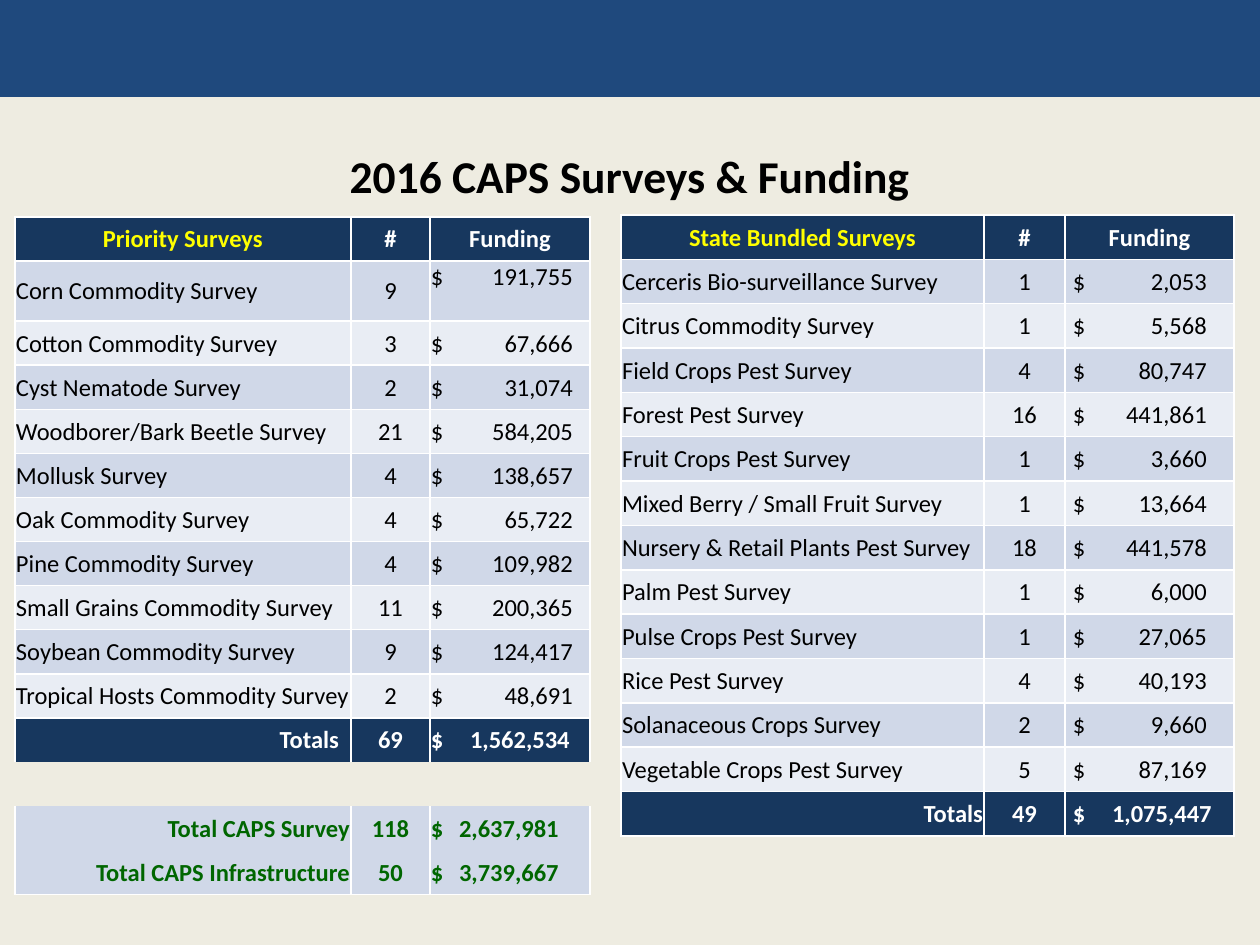
from dataclasses import dataclass

from lxml import etree
from pptx import Presentation
from pptx import util as u
from pptx.dml.color import RGBColor
from pptx.enum import shapes, text
from pptx.oxml import parse_xml
from pptx.oxml.ns import nsdecls, qn

PX = 914400 / 126
LEFT, CENTER, RIGHT = text.PP_ALIGN.LEFT, text.PP_ALIGN.CENTER, text.PP_ALIGN.RIGHT
PLAIN_GRID = "{2D5ABB26-0587-4C30-8999-92F81FD0307C}"
SIDES = {"l": "lnL", "r": "lnR", "t": "lnT", "b": "lnB"}


@dataclass(frozen=True)
class Theme:
    font: str = "Calibri"
    title_size: int = 26
    table_size: int = 14
    page: str = "EEECE1"
    band: str = "1F497D"
    dark: str = "17375E"
    odd: str = "D0D8E8"
    even: str = "E9EDF4"
    white: str = "FFFFFF"
    black: str = "000000"
    yellow: str = "FFFF00"
    green: str = "006600"


THEME = Theme()

PRIORITY = [
    ("Corn Commodity Survey", "9", "191,755"),
    ("Cotton Commodity Survey", "3", "67,666"),
    ("Cyst Nematode Survey", "2", "31,074"),
    ("Woodborer/Bark Beetle Survey", "21", "584,205"),
    ("Mollusk Survey", "4", "138,657"),
    ("Oak Commodity Survey", "4", "65,722"),
    ("Pine Commodity Survey", "4", "109,982"),
    ("Small Grains Commodity Survey", "11", "200,365"),
    ("Soybean Commodity Survey", "9", "124,417"),
    ("Tropical Hosts Commodity Survey", "2", "48,691"),
]
BUNDLED = [
    ("Cerceris Bio-surveillance Survey", "1", "2,053"),
    ("Citrus Commodity Survey", "1", "5,568"),
    ("Field Crops Pest Survey", "4", "80,747"),
    ("Forest Pest Survey", "16", "441,861"),
    ("Fruit Crops Pest Survey", "1", "3,660"),
    ("Mixed Berry / Small Fruit Survey", "1", "13,664"),
    ("Nursery & Retail Plants Pest Survey", "18", "441,578"),
    ("Palm Pest Survey", "1", "6,000"),
    ("Pulse Crops Pest Survey", "1", "27,065"),
    ("Rice Pest Survey", "4", "40,193"),
    ("Solanaceous Crops Survey", "2", "9,660"),
    ("Vegetable Crops Pest Survey", "5", "87,169"),
]


def px(length):
    return u.Emu(round(length * PX))


def write(frame, words, *, size=THEME.table_size, color=THEME.black, bold=False,
          align=LEFT, tab=None):
    """Put one formatted line in a text frame, with an optional right tab stop."""
    para = frame.paragraphs[0]
    para.alignment = align
    if tab:
        stops = etree.SubElement(para._p.get_or_add_pPr(), qn("a:tabLst"))
        etree.SubElement(stops, qn("a:tab"), pos=str(px(tab)), algn="r")
    span = para.add_run()
    span.text = words
    span.font.name = THEME.font
    span.font.size = u.Pt(size)
    span.font.bold = bold
    span.font.color.rgb = RGBColor.from_string(color)
    return span


def add_band(page):
    band = page.shapes.add_shape(shapes.MSO_SHAPE.RECTANGLE, 0, 0, px(1260), px(97))
    band.shadow.inherit = False
    band.fill.solid()
    band.fill.fore_color.rgb = RGBColor.from_string(THEME.band)
    band.line.fill.background()


def add_title(page, words):
    box = page.shapes.add_textbox(px(63), px(126), px(1134), px(98))
    frame = box.text_frame
    frame.word_wrap = True
    frame.vertical_anchor = text.MSO_ANCHOR.MIDDLE
    span = write(frame, words, size=THEME.title_size, bold=True, align=CENTER)
    shadow = parse_xml(
        f'<a:effectLst {nsdecls("a")}><a:outerShdw blurRad="38100" dist="38100" '
        'dir="2700000" algn="tl"><a:srgbClr val="000000"><a:alpha val="43000"/>'
        '</a:srgbClr></a:outerShdw></a:effectLst>')
    span._r.rPr.find(qn("a:latin")).addprevious(shadow)


def set_borders(cell, sides):
    """Draw white lines on the given sides and none on the others."""
    props = cell._tc.get_or_add_tcPr()
    for place, (side, tag) in enumerate(SIDES.items()):
        line = etree.Element(qn("a:" + tag), w=str(u.Pt(1)))
        if side in sides:
            paint = etree.SubElement(line, qn("a:solidFill"))
            etree.SubElement(paint, qn("a:srgbClr"), val=THEME.white)
        else:
            etree.SubElement(line, qn("a:noFill"))
        props.insert(place, line)


def style_cell(cell, fill, sides, left=1, right=1):
    cell.vertical_anchor = text.MSO_ANCHOR.MIDDLE
    cell.margin_left, cell.margin_right = px(left), px(right)
    cell.margin_top, cell.margin_bottom = px(1), 0
    if fill:
        cell.fill.solid()
        cell.fill.fore_color.rgb = RGBColor.from_string(fill)
    else:
        cell.fill.background()
    set_borders(cell, sides)


def add_grid(page, left, top, widths, count, row_height):
    frame = page.shapes.add_table(count, len(widths), px(left), px(top),
                                  px(sum(widths)), px(row_height * count))
    grid = frame.table
    grid.first_row = grid.horz_banding = False
    grid._tbl.tblPr.find(qn("a:tableStyleId")).text = PLAIN_GRID
    for column, width in zip(grid.columns, widths):
        column.width = px(width)
    for row in grid.rows:
        row.height = px(row_height)
    return grid


def fill_row(row, record, fill, *, sides="lrtb", color=THEME.black, bold=False,
             name_align=LEFT, name_right=1, money_left=1, tab=142):
    name, number, funding = row.cells
    style_cell(name, fill, sides, right=name_right)
    style_cell(number, fill, sides)
    style_cell(funding, fill, sides, left=money_left)
    look = dict(color=color, bold=bold)
    write(name.text_frame, record[0], align=name_align, **look)
    write(number.text_frame, record[1], align=CENTER, **look)
    write(funding.text_frame, "$\t" + record[2], tab=tab, **look)


def fill_surveys(grid, heading, surveys, totals, *, money_left, tab, total_tab,
                 total_sides, total_right):
    # Heading row
    for cell, words, color in zip(grid.rows[0].cells, (heading, "#", "Funding"),
                                  (THEME.yellow, THEME.white, THEME.white)):
        style_cell(cell, THEME.dark, "lrtb")
        write(cell.text_frame, words, color=color, bold=True, align=CENTER)
    # Banded survey rows
    for index, record in enumerate(surveys):
        fill_row(grid.rows[index + 1], record, (THEME.odd, THEME.even)[index % 2],
                 money_left=money_left, tab=tab)
    # Totals row
    fill_row(grid.rows[len(surveys) + 1], totals, THEME.dark, sides=total_sides,
             color=THEME.white, bold=True, name_align=RIGHT, name_right=total_right,
             money_left=money_left, tab=total_tab)


def add_priority_table(page):
    grid = add_grid(page, 15, 217, (336, 79, 160), 15, 618 / 14)
    fill_surveys(grid, "Priority Surveys", PRIORITY, ("Totals", "69", "1,562,534"),
                 money_left=1, tab=142, total_tab=139, total_sides="lrt", total_right=12)
    # The first survey is taller, with its funding at the top
    grid.rows[1].height = px(60)
    grid.cell(1, 2).vertical_anchor = text.MSO_ANCHOR.TOP
    # Open gap, then the programme totals
    for cell in grid.rows[12].cells:
        style_cell(cell, None, "")
    programme = [("Total CAPS Survey", "118", "2,637,981", "lr"),
                 ("Total CAPS Infrastructure", "50", "3,739,667", "lrb")]
    for index, (*record, sides) in enumerate(programme, 13):
        fill_row(grid.rows[index], record, THEME.odd, sides=sides, color=THEME.green,
                 bold=True, name_align=RIGHT, tab=128)


def add_bundled_table(page):
    grid = add_grid(page, 621, 215, (363, 81, 169), 14, 621 / 14)
    fill_surveys(grid, "State Bundled Surveys", BUNDLED, ("Totals", "49", "1,075,447"),
                 money_left=8, tab=134, total_tab=139, total_sides="lrtb", total_right=1)


def main():
    deck = Presentation()
    deck.slide_width, deck.slide_height = px(1260), px(945)
    page = deck.slides.add_slide(deck.slide_layouts[6])
    page.background.fill.solid()
    page.background.fill.fore_color.rgb = RGBColor.from_string(THEME.page)
    add_band(page)
    add_priority_table(page)
    add_bundled_table(page)
    add_title(page, "2016 CAPS Surveys & Funding")
    deck.save("out.pptx")


if __name__ == "__main__":
    main()
